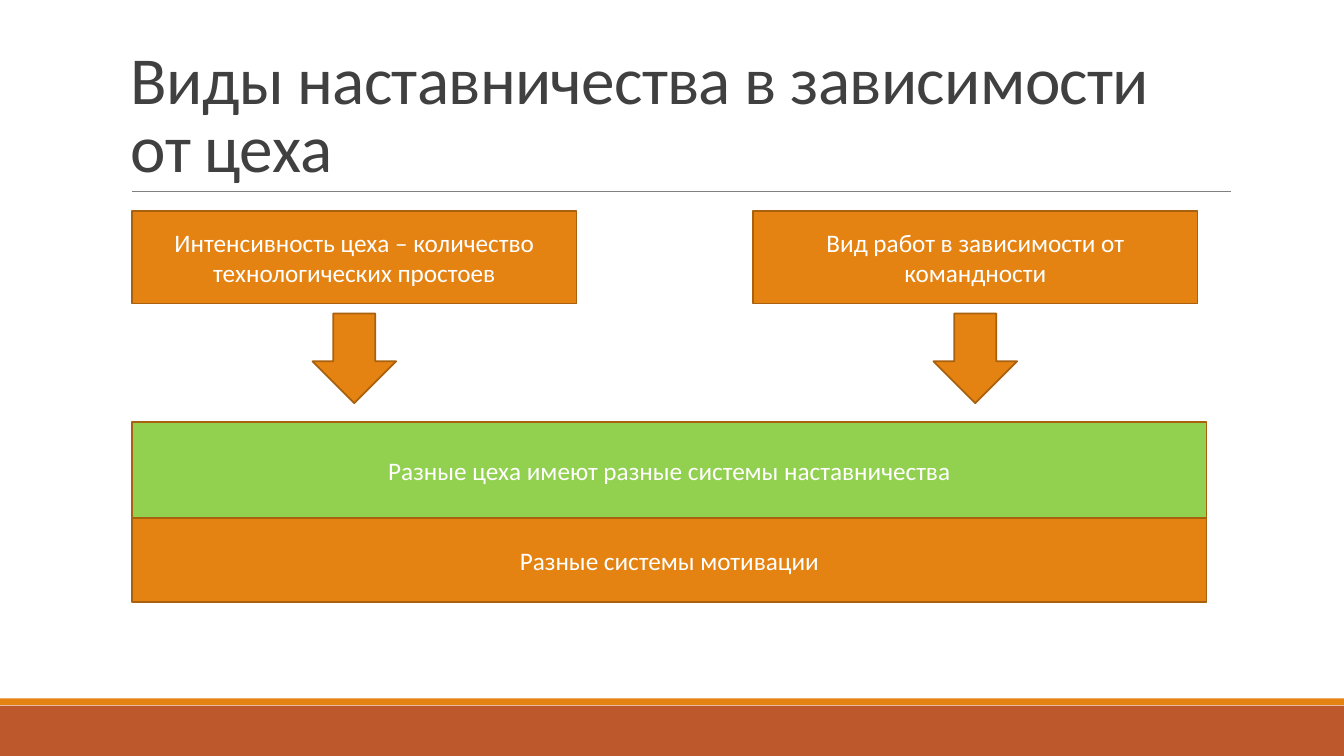
from lxml import etree
from pptx import Presentation
from pptx.dml.color import RGBColor
from pptx.enum.shapes import MSO_CONNECTOR, MSO_SHAPE
from pptx.enum.text import MSO_ANCHOR, PP_ALIGN
from pptx.oxml.ns import qn
from pptx.util import Cm, Pt

RECTANGLE = MSO_SHAPE.RECTANGLE
DOWN_ARROW = MSO_SHAPE.DOWN_ARROW
STRAIGHT = MSO_CONNECTOR.STRAIGHT
MIDDLE = MSO_ANCHOR.MIDDLE
BOTTOM = MSO_ANCHOR.BOTTOM
CENTER = PP_ALIGN.CENTER
LEFT = PP_ALIGN.LEFT

COLORS = {
    "orange": "E48312",
    "rust": "BD582C",
    "green": "92D050",
    "outline": "A9610D",
    "rule": "808080",
    "title": "404040",
    "white": "FFFFFF",
}
SLIDE_WIDTH = 33.87
MARGIN = 3.33
BOX_WIDTH, BOX_HEIGHT = 11.2, 2.34
COLUMN_STEP = 15.65
ARROW_WIDTH, ARROW_HEIGHT = 2.11, 2.26
BAND_WIDTH = 27.08


def add_block(kind, left, top, width, height, fill, outlined=True):
    shape = slide.shapes.add_shape(kind, Cm(left), Cm(top), Cm(width), Cm(height))
    shape.shadow.inherit = False
    shape.fill.solid()
    shape.fill.fore_color.rgb = RGBColor.from_string(COLORS[fill])
    if outlined:
        shape.line.color.rgb = RGBColor.from_string(COLORS["outline"])
        shape.line.width = Pt(1.25)
    else:
        shape.line.fill.background()
    return shape


def write_text(shape, text, size, color, alignment, anchor):
    frame = shape.text_frame
    frame.word_wrap = True
    frame.vertical_anchor = anchor
    paragraph = frame.paragraphs[0]
    paragraph.alignment = alignment
    run = paragraph.add_run()
    run.text = text
    font_format = {"name": "Calibri", "size": Pt(size)}
    for attribute, value in font_format.items():
        setattr(run.font, attribute, value)
    run.font.color.rgb = RGBColor.from_string(COLORS[color])
    return paragraph


presentation = Presentation()
presentation.slide_width = Cm(SLIDE_WIDTH)
presentation.slide_height = Cm(19.05)
slide = presentation.slides.add_slide(presentation.slide_layouts[6])

add_block(RECTANGLE, 0, 17.78, SLIDE_WIDTH, 1.27, "rust", outlined=False)
add_block(RECTANGLE, 0, 17.6, SLIDE_WIDTH, 0.17, "orange", outlined=False)

title_rule = slide.shapes.add_connector(STRAIGHT, Cm(MARGIN), Cm(4.83), Cm(31.01), Cm(4.83))
title_rule.line.color.rgb = RGBColor.from_string(COLORS["rule"])
title_rule.line.width = Pt(0.5)
etree.SubElement(title_rule._element.spPr, qn("a:effectLst"))

title = slide.shapes.add_textbox(Cm(3.05), Cm(0.79), Cm(27.94), Cm(4.04))
title_text = "Виды наставничества в зависимости от цеха"
title_paragraph = write_text(title, title_text, 48, "title", LEFT, BOTTOM)
title_paragraph.line_spacing = 0.85
title_paragraph.runs[0].font._element.set("spc", "-50")

factors = [
    "Интенсивность цеха – количество технологических простоев",
    "Вид работ в зависимости от командности",
]
for column, factor in enumerate(factors):
    left = MARGIN + column * COLUMN_STEP
    box = add_block(RECTANGLE, left, 5.31, BOX_WIDTH, BOX_HEIGHT, "orange")
    write_text(box, factor, 18, "white", CENTER, MIDDLE)
    arrow_left = left + (BOX_WIDTH - ARROW_WIDTH) / 2
    add_block(DOWN_ARROW, arrow_left, 7.9, ARROW_WIDTH, ARROW_HEIGHT, "orange")

conclusions = [
    ("Разные цеха имеют разные системы наставничества", 2.41, "green"),
    ("Разные системы мотивации", 2.13, "orange"),
]
top = 10.64
for conclusion, height, fill in conclusions:
    band = add_block(RECTANGLE, MARGIN, top, BAND_WIDTH, height, fill)
    write_text(band, conclusion, 18, "white", CENTER, MIDDLE)
    top += height

presentation.save("out.pptx")
